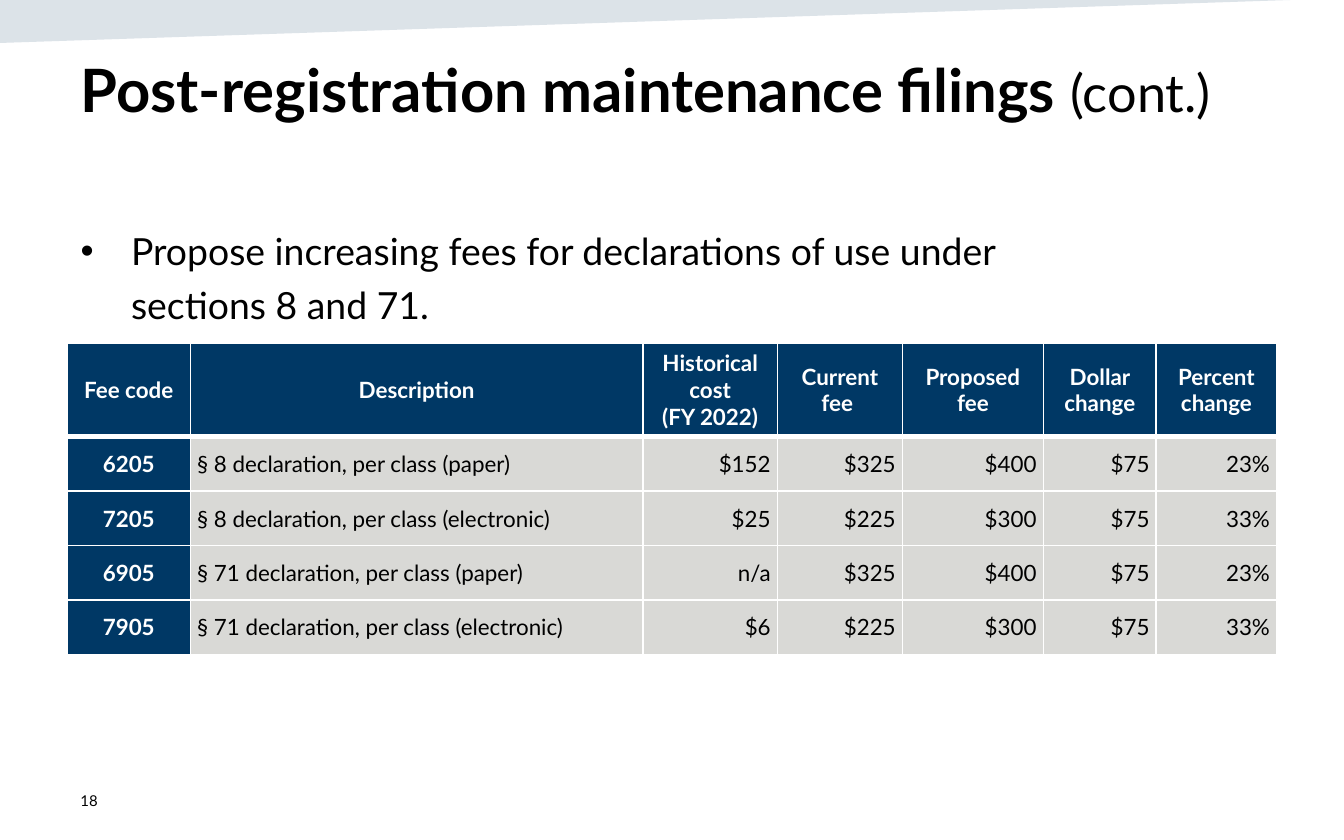
from dataclasses import dataclass

from lxml.etree import SubElement
from pptx import Presentation
from pptx.dml.color import RGBColor
from pptx.enum.text import MSO_ANCHOR as Anchor, MSO_AUTO_SIZE as AutoSize, PP_ALIGN as Align
from pptx.oxml.ns import qn
from pptx.util import Pt


@dataclass(frozen=True)
class Theme:
    font: str = "Lato"
    text: str = "000000"
    white: str = "FFFFFF"
    navy: str = "003865"
    grey: str = "D9D9D6"
    band: str = "164469"
    title_size: int = 32
    suffix_size: int = 28
    body_size: int = 20
    table_size: int = 12
    number_size: int = 8


THEME = Theme()
MARGIN, CONTENT_WIDTH = 36, 648
COLUMN_WIDTHS = [66, 242.5, 72, 67, 75.5, 60.5, 64.5]
HEADER_HEIGHT, ROW_HEIGHT = 50.4, 29.15
HEADERS = ["Fee code", "Description", "Historical cost\n(FY 2022)", "Current fee ",
           "Proposed fee", "Dollar change", "Percent change"]
FEES = [
    ["6205", "§ 8 declaration, per class (paper)", "$152", "$325", "$400", "$75", "23%"],
    ["7205", "§ 8 declaration, per class (electronic)", "$25", "$225", "$300", "$75", "33%"],
    ["6905", "§ 71 declaration, per class (paper)", "n/a", "$325", "$400", "$75", "23%"],
    ["7905", "§ 71 declaration, per class (electronic)", "$6", "$225", "$300", "$75", "33%"],
]


def style_font(font, size, color=THEME.text, bold=False):
    font.name = THEME.font
    font.size = Pt(size)
    font.bold = bold
    font.color.rgb = RGBColor.from_string(color)


def place(shape, left, top, width, height):
    shape.left, shape.top, shape.width, shape.height = map(Pt, (left, top, width, height))


def prepare_frame(text_frame, anchor):
    text_frame.word_wrap = True
    text_frame.auto_size = AutoSize.NONE
    text_frame.vertical_anchor = anchor


def add_top_band(slide):
    builder = slide.shapes.build_freeform(0, 0, scale=Pt(1))
    builder.add_line_segments([(0, 23), (721.4, -0.7)])
    band = builder.convert_to_shape()
    band.shadow.inherit = False
    band.line.fill.background()
    band.fill.solid()
    band.fill.fore_color.rgb = RGBColor.from_string(THEME.band)
    color = band.fill._xPr.find(qn("a:solidFill"))[0]
    SubElement(color, qn("a:alpha"), val="15000")
    tree = slide.shapes._spTree
    tree.remove(band._element)
    tree.insert(2, band._element)


def fill_title(title):
    place(title, MARGIN, 24.5, CONTENT_WIDTH, 75)
    prepare_frame(title.text_frame, Anchor.TOP)
    paragraph = title.text_frame.paragraphs[0]
    paragraph.alignment = Align.LEFT
    for text, size, bold in [
        ("Post-registration maintenance filings ", THEME.title_size, True),
        ("(cont.)", THEME.suffix_size, False),
    ]:
        run = paragraph.add_run()
        run.text = text
        style_font(run.font, size, bold=bold)


def fill_body(body):
    place(body, MARGIN, 113.75, CONTENT_WIDTH, 298)
    prepare_frame(body.text_frame, Anchor.TOP)
    body.text_frame.text = ("Propose increasing fees for declarations of use under "
                            "\vsections 8 and 71.")
    paragraph = body.text_frame.paragraphs[0]
    paragraph.line_spacing = 1.2
    paragraph.space_before = Pt(9)
    properties = paragraph._p.get_or_add_pPr()
    properties.set("marL", str(Pt(27)))
    properties.set("indent", str(Pt(-27)))
    for run in paragraph.runs:
        style_font(run.font, THEME.body_size)


def set_borders(cell, top, bottom):
    """Draw white cell borders, before the fill as the schema orders them."""
    properties = cell._tc.get_or_add_tcPr()
    for side, width in (("L", 1), ("R", 1), ("T", top), ("B", bottom)):
        line = SubElement(properties, qn(f"a:ln{side}"), w=str(Pt(width)))
        fill = SubElement(line, qn("a:solidFill"))
        SubElement(fill, qn("a:srgbClr"), val=THEME.white)


def fill_cell(cell, text, row, column):
    is_header = row == 0
    is_label = is_header or column == 0
    set_borders(cell, top=3 if row == 1 else 1, bottom=3 if is_header else 1)
    cell.fill.solid()
    cell.fill.fore_color.rgb = RGBColor.from_string(THEME.navy if is_label else THEME.grey)
    cell.margin_left = cell.margin_right = cell.margin_top = cell.margin_bottom = Pt(3.6)
    cell.vertical_anchor = Anchor.MIDDLE
    cell.text_frame.text = text
    for paragraph in cell.text_frame.paragraphs:
        if is_label:
            paragraph.alignment = Align.CENTER
        else:
            paragraph.alignment = Align.LEFT if column == 1 else Align.RIGHT
        if not is_header:
            paragraph.space_before = paragraph.space_after = Pt(6)
        for run in paragraph.runs:
            style_font(run.font, THEME.table_size,
                       THEME.white if is_label else THEME.text, bold=is_label)


def add_fee_table(slide):
    rows = [HEADERS, *FEES]
    height = HEADER_HEIGHT + ROW_HEIGHT * len(FEES)
    table = slide.shapes.add_table(len(rows), len(HEADERS), Pt(MARGIN), Pt(183.6),
                                   Pt(CONTENT_WIDTH), Pt(height)).table
    table.horz_banding = False
    for column, width in zip(table.columns, COLUMN_WIDTHS):
        column.width = Pt(width)
    for row_index, values in enumerate(rows):
        table.rows[row_index].height = Pt(ROW_HEIGHT if row_index else HEADER_HEIGHT)
        for column_index, text in enumerate(values):
            fill_cell(table.cell(row_index, column_index), text, row_index, column_index)


def add_page_number(slide, number):
    box = slide.shapes.add_textbox(Pt(MARGIN), Pt(417), Pt(162), Pt(24))
    prepare_frame(box.text_frame, Anchor.MIDDLE)
    box.text_frame.text = number
    style_font(box.text_frame.paragraphs[0].runs[0].font, THEME.number_size)


def main():
    presentation = Presentation()
    presentation.slide_width, presentation.slide_height = Pt(720), Pt(450)
    slide = presentation.slides.add_slide(presentation.slide_layouts[1])
    add_top_band(slide)
    fill_title(slide.shapes.title)
    fill_body(slide.placeholders[1])
    add_fee_table(slide)
    add_page_number(slide, "18")
    presentation.save("out.pptx")


if __name__ == "__main__":
    main()
